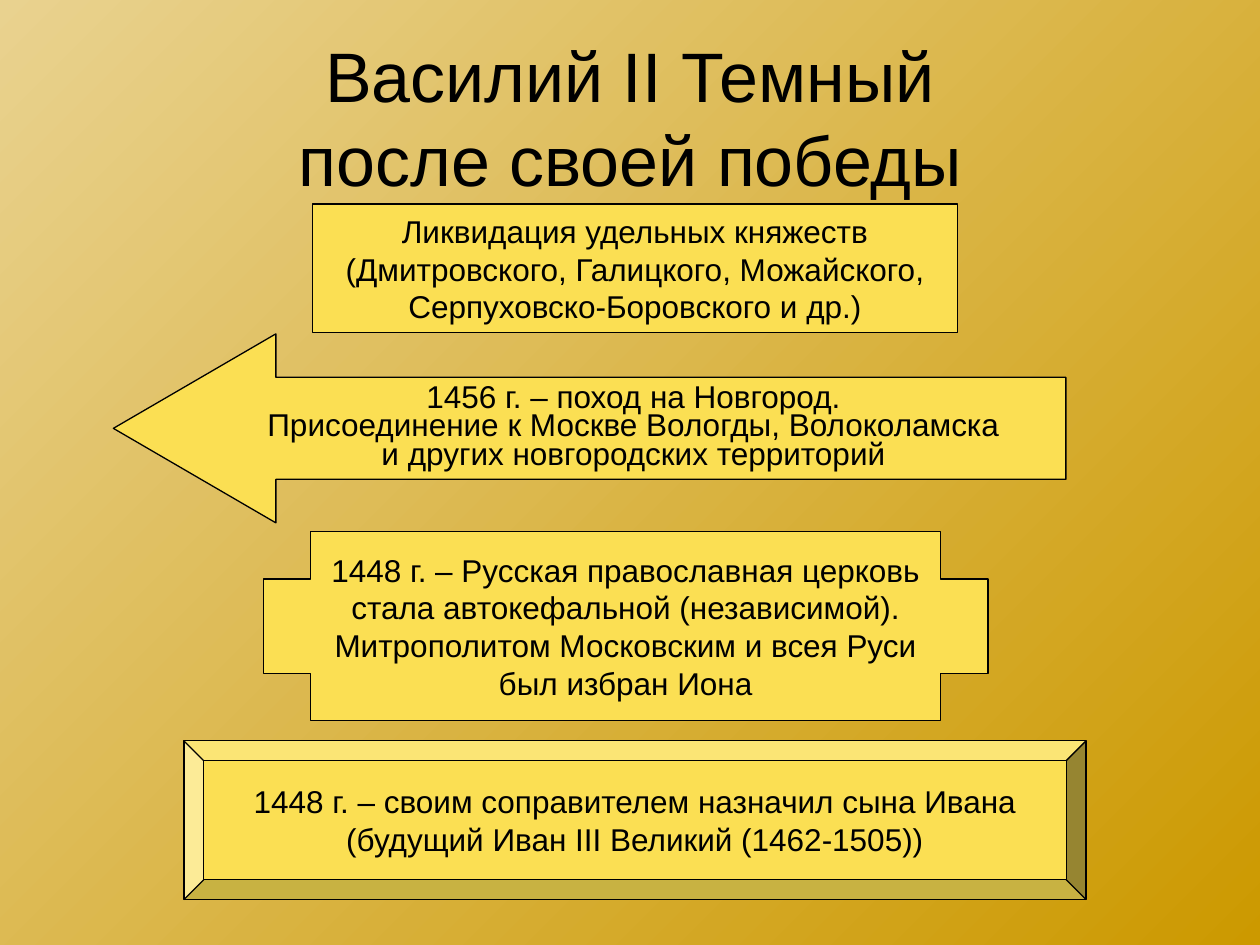
from pptx import Presentation
from pptx.dml.color import RGBColor
from pptx.enum.shapes import MSO_SHAPE
from pptx.enum.text import MSO_ANCHOR, PP_ALIGN
from pptx.util import Inches, Pt

BLACK = RGBColor(0x00, 0x00, 0x00)
YELLOW = RGBColor(0xFB, 0xDF, 0x53)
SAND = RGBColor(0xE9, 0xD2, 0x8F)
GOLD = RGBColor(0xCC, 0x99, 0x00)

TITLE = "Василий II Темный\vпосле своей победы"
# preset, adjustments, (left, top, width, height), line spacing, lines
EVENTS = [
    (MSO_SHAPE.LEFT_ARROW, [0.54, 0.86], (0.9, 2.65, 7.56, 1.5), 0.75,
     ["1456 г. – поход на Новгород.",
      "Присоединение к Москве Вологды, Волоколамска",
      "и других новгородских территорий"]),
    (MSO_SHAPE.CROSS, [0.25], (2.09, 4.22, 5.75, 1.5), 1.0,
     ["1448 г. – Русская православная церковь",
      "стала автокефальной (независимой).",
      "Митрополитом Московским и всея Руси",
      "был избран Иона"]),
    (MSO_SHAPE.BEVEL, [0.125], (1.46, 5.88, 7.16, 1.26), 1.0,
     ["1448 г. – своим соправителем назначил сына Ивана",
      "(будущий Иван III Великий (1462-1505))"]),
    (MSO_SHAPE.RECTANGLE, [], (2.48, 1.62, 5.12, 1.02), 1.0,
     ["Ликвидация удельных княжеств",
      "(Дмитровского, Галицкого, Можайского,",
      "Серпуховско-Боровского и др.)"]),
]


def write(tf, lines, size, wrap, spacing=1.0):
    tf.word_wrap = wrap
    tf.vertical_anchor = MSO_ANCHOR.MIDDLE
    for i, line in enumerate(lines):
        p = tf.add_paragraph() if i else tf.paragraphs[0]
        p.text = line
        p.alignment = PP_ALIGN.CENTER
        p.line_spacing = spacing
        p.font.size = Pt(size)
        p.font.name = "Arial"
        p.font.color.rgb = BLACK


prs = Presentation()
prs.slide_width, prs.slide_height = Inches(10), Inches(7.5)
s = prs.slides.add_slide(prs.slide_layouts[6])

bg = s.background.fill
bg.gradient()
bg.gradient_angle = 315  # counter-clockwise: top left to bottom right
for stop, color in zip(bg.gradient_stops, (SAND, GOLD)):
    stop.color.rgb = color

title = s.shapes.add_textbox(*map(Inches, (0.5, 0.3, 9, 1.25)))
write(title.text_frame, [TITLE], 40, wrap=True)

for preset, adjustments, box, spacing, lines in EVENTS:
    sp = s.shapes.add_shape(preset, *map(Inches, box))
    for i, value in enumerate(adjustments):
        sp.adjustments[i] = value
    sp.shadow.inherit = False
    sp.fill.solid()
    sp.fill.fore_color.rgb = YELLOW
    sp.line.color.rgb = BLACK
    sp.line.width = Pt(0.75)
    write(sp.text_frame, lines, 18, wrap=False, spacing=spacing)

prs.save("out.pptx")
